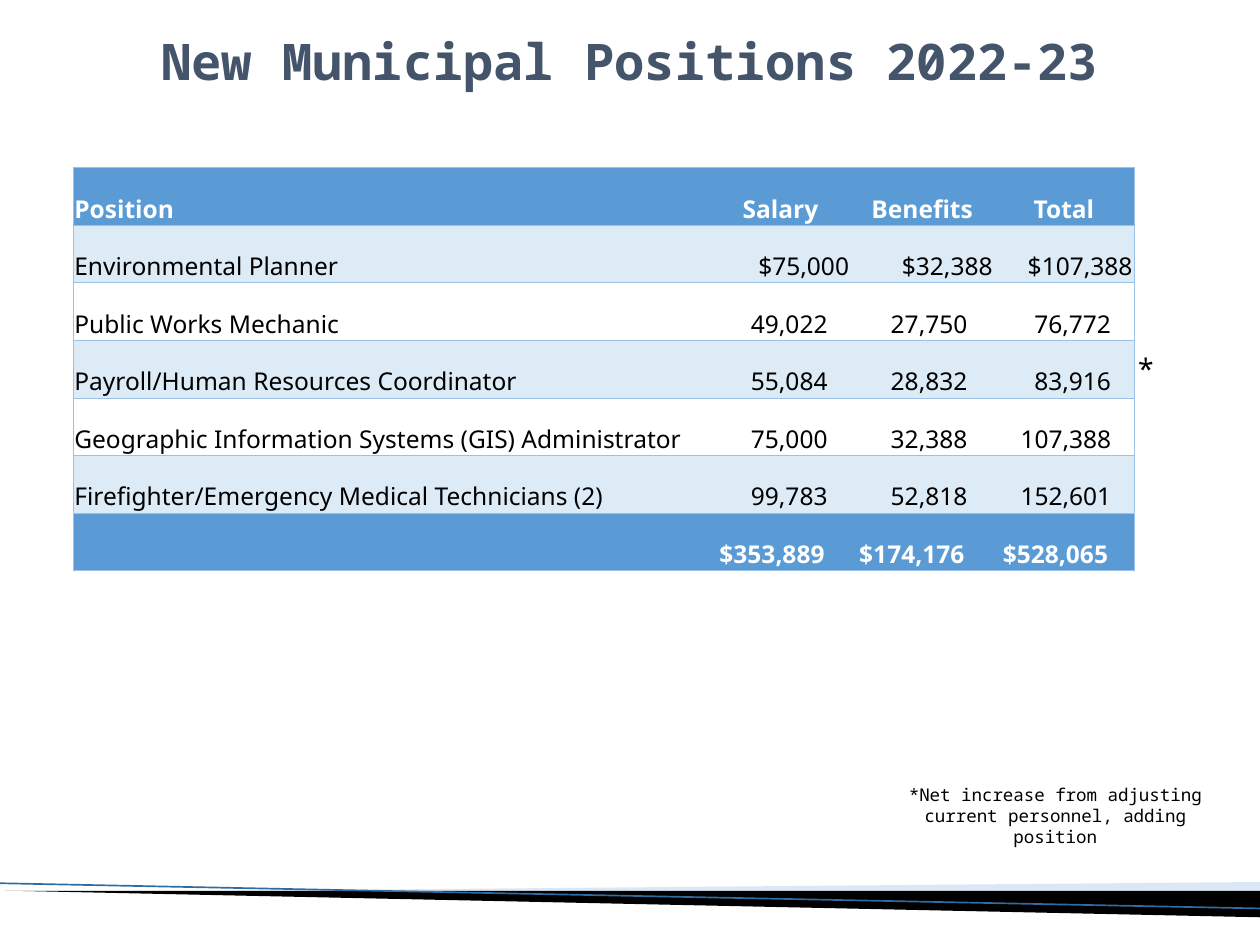
"""Build the slide listing new municipal positions for 2022-23."""
from lxml import etree
from pptx import Presentation
from pptx.dml.color import RGBColor
from pptx.enum.shapes import MSO_CONNECTOR
from pptx.enum.text import MSO_ANCHOR, PP_ALIGN
from pptx.oxml.ns import qn
from pptx.util import Inches, Pt

LEFT, CENTER, RIGHT = PP_ALIGN.LEFT, PP_ALIGN.CENTER, PP_ALIGN.RIGHT
TOP, MIDDLE, BOTTOM = MSO_ANCHOR.TOP, MSO_ANCHOR.MIDDLE, MSO_ANCHOR.BOTTOM
STRAIGHT = MSO_CONNECTOR.STRAIGHT

WIDTH, HEIGHT = 10, 7.5
SANS, MONO = "Noto Sans", "Noto Sans Mono"
NO_STYLE = "{2D5ABB26-0587-4C30-8999-92F81FD0307C}"
COLORS = {
    "title": "44546A", "text": "000000", "white": "FFFFFF",
    "header": "5B9BD5", "band": "DDEBF7", "border": "9BC2E6",
    "wedge": "A9C5E9", "stripe": "000000", "line": "2E6CA4",
}

TEXTS = [
    ("New Municipal Positions 2022-23", (0.29, 0.19, 9.42, 0.58), 28.8, "title", True, CENTER, MIDDLE),
    ("*Net increase from adjusting current personnel, adding position",
     (7.04, 6.17, 2.67, 0.44), 10, "text", False, CENTER, TOP),
    ("*", (8.92, 2.73, 0.49, 0.4), 18, "text", False, LEFT, TOP),
]
ROWS = [
    ("Position", "Salary", "Benefits", "Total"),
    ("Environmental Planner", "$75,000", "$32,388", "$107,388"),
    ("Public Works Mechanic", "49,022", "27,750", "76,772"),
    ("Payroll/Human Resources Coordinator", "55,084", "28,832", "83,916"),
    ("Geographic Information Systems (GIS) Administrator", "75,000", "32,388", "107,388"),
    ("Firefighter/Emergency Medical Technicians (2)", "99,783", "52,818", "152,601"),
    ("", "$353,889", "$174,176", "$528,065"),
]
TABLE_LEFT, TABLE_TOP, TABLE_HEIGHT = 0.58, 1.33, 3.2
COLUMN_WIDTHS = (5.06, 1.11, 1.14, 1.11)
CELL_MARGIN = 0.01
AMOUNT_INDENTS = {6: 0.32, 7: 0.21, 8: 0.07}

WEDGE = [(WIDTH, 7), (WIDTH, 7.12), (1.85, 7.07)]
STRIPE = [(0.04, 7.07), (WIDTH, 7.07), (WIDTH, 7.28), (0.12, 7.07)]
LINE = (0, 7.01, WIDTH, 7.21)


def color(name):
    return RGBColor.from_string(COLORS[name])


def style_text(paragraph, font_name, size, color_name, bold, alignment):
    paragraph.alignment = alignment
    for run in paragraph.runs:
        run.font.name = font_name
        run.font.size = Pt(size)
        run.font.bold = bold
        run.font.color.rgb = color(color_name)


def add_polygon(slide, points, color_name, opacity=100):
    corners = [(Inches(x), Inches(y)) for x, y in points]
    builder = slide.shapes.build_freeform(*corners[0])
    builder.add_line_segments(corners[1:])
    shape = builder.convert_to_shape()
    shape.shadow.inherit = False
    shape.fill.solid()
    shape.fill.fore_color.rgb = color(color_name)
    shape.line.fill.background()
    if opacity < 100:
        for fill_color in shape._element.spPr.iter(qn("a:srgbClr")):
            etree.SubElement(fill_color, qn("a:alpha"), val=str(opacity * 1000))


def add_footer(slide):
    add_polygon(slide, WEDGE, "wedge", 40)
    add_polygon(slide, STRIPE, "stripe")
    line = slide.shapes.add_connector(STRAIGHT, *map(Inches, LINE))
    line.line.color.rgb = color("line")
    line.line.width = Pt(0.95)
    etree.SubElement(line._element.spPr, qn("a:effectLst"))


def add_text(slide, text, box, size, color_name, bold, alignment, anchor):
    frame = slide.shapes.add_textbox(*map(Inches, box)).text_frame
    frame.word_wrap = True
    frame.vertical_anchor = anchor
    frame.text = text
    style_text(frame.paragraphs[0], MONO, size, color_name, bold, alignment)


def add_borders(cell, sides):
    properties = cell._tc.get_or_add_tcPr()
    for side in sides:
        border = etree.SubElement(properties, qn("a:ln" + side), w=str(Pt(0.5)))
        fill = etree.SubElement(border, qn("a:solidFill"))
        etree.SubElement(fill, qn("a:srgbClr"), val=COLORS["border"])


def fill_cell(cell, text, row, column):
    last_row, last_column = len(ROWS) - 1, len(COLUMN_WIDTHS) - 1
    strong = row in (0, last_row)
    alignment, indent = LEFT, CELL_MARGIN
    if column and row < 2:
        alignment = (CENTER, RIGHT)[row]
    elif column:
        indent = AMOUNT_INDENTS[len(text)]
    add_borders(cell, "L" * (column == 0) + "R" * (column == last_column) + "TB")
    if strong or row % 2:
        cell.fill.solid()
        cell.fill.fore_color.rgb = color("header" if strong else "band")
    else:
        cell.fill.background()
    cell.margin_left = Inches(indent)
    cell.margin_right = cell.margin_top = Inches(CELL_MARGIN)
    cell.margin_bottom = 0
    cell.vertical_anchor = BOTTOM
    cell.text_frame.text = text
    style_text(cell.text_frame.paragraphs[0], SANS, 14, "white" if strong else "text", strong, alignment)


def add_positions_table(slide):
    box = (TABLE_LEFT, TABLE_TOP, sum(COLUMN_WIDTHS), TABLE_HEIGHT)
    frame = slide.shapes.add_table(len(ROWS), len(COLUMN_WIDTHS), *map(Inches, box))
    table = frame.table
    table.first_row = table.horz_banding = False
    for style in frame._element.iter(qn("a:tableStyleId")):
        style.text = NO_STYLE
    for column, width in zip(table.columns, COLUMN_WIDTHS):
        column.width = Inches(width)
    for row, values in enumerate(ROWS):
        for column, text in enumerate(values):
            fill_cell(table.cell(row, column), text, row, column)


def main():
    presentation = Presentation()
    presentation.slide_width, presentation.slide_height = Inches(WIDTH), Inches(HEIGHT)
    slide = presentation.slides.add_slide(presentation.slide_layouts[6])
    add_footer(slide)
    add_positions_table(slide)
    for text in TEXTS:
        add_text(slide, *text)
    presentation.save("out.pptx")


if __name__ == "__main__":
    main()
